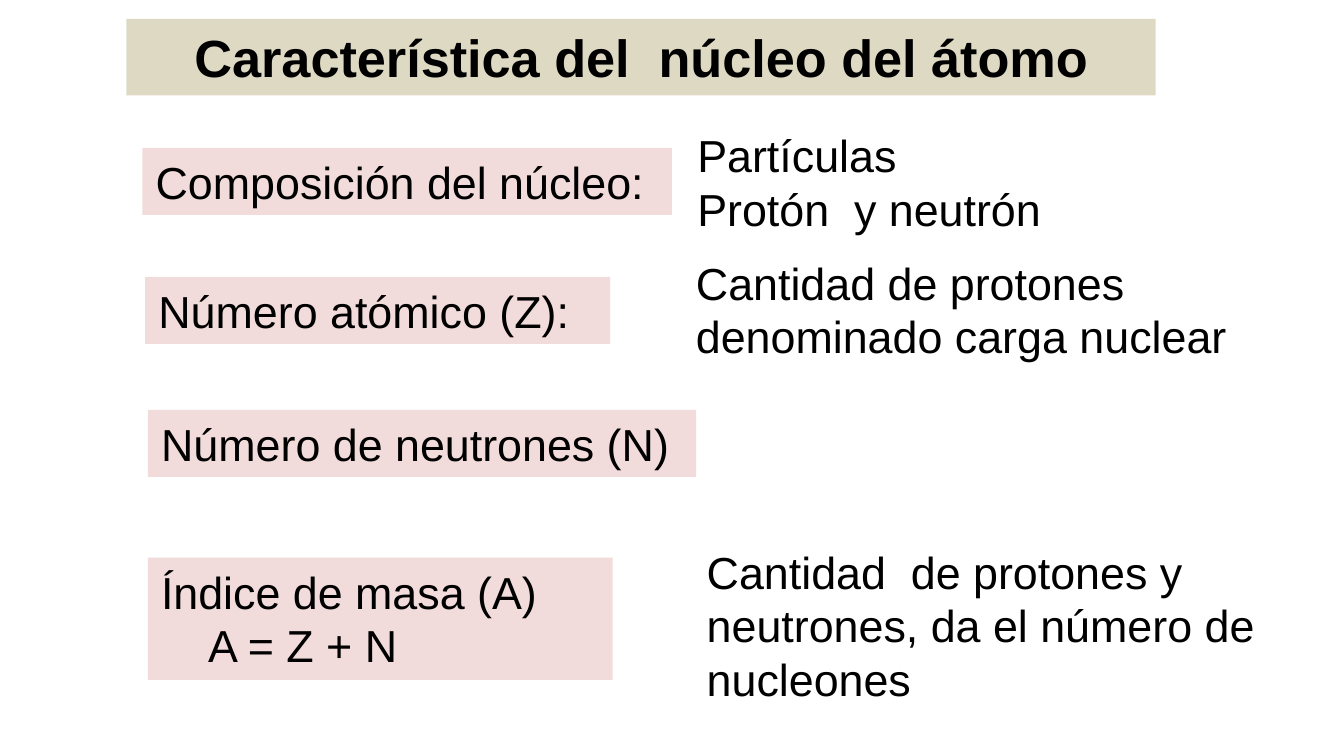
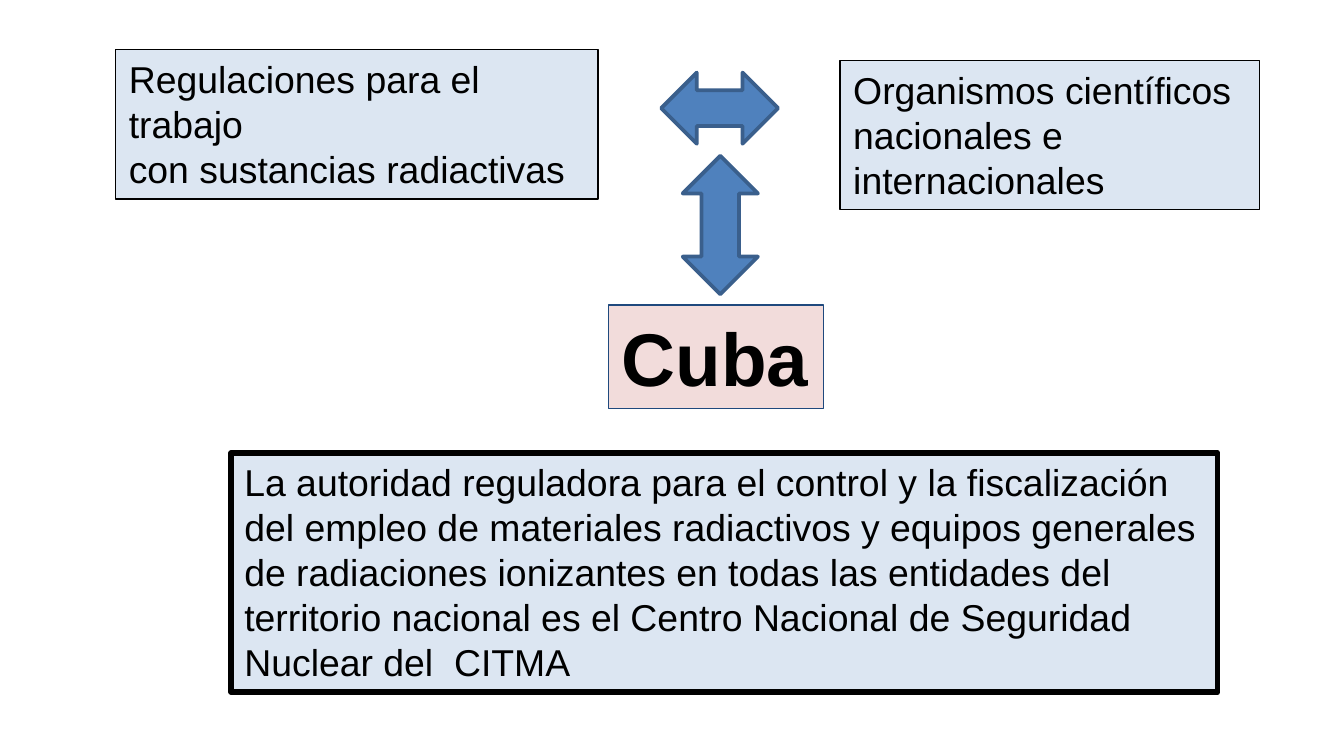
"""Builds two slides on the atomic nucleus and on the regulation of radioactive work."""
from pptx import Presentation
from pptx.dml.color import RGBColor
from pptx.enum.shapes import MSO_SHAPE
from pptx.enum.text import PP_ALIGN
from pptx.util import Inches, Pt

LEFT, CENTER = PP_ALIGN.LEFT, PP_ALIGN.CENTER
SIDEWAYS, UPRIGHT = MSO_SHAPE.LEFT_RIGHT_ARROW, MSO_SHAPE.UP_DOWN_ARROW
FONT = "Arial"
COLORS = {
    "text": "000000",
    "title": "DDD9C3",
    "term": "F2DCDB",
    "body": "DCE6F2",
    "arrow": "4F81BD",
    "arrow_edge": "3A5F8C",
    "country_edge": "1F497D",
}


def paint(shape, fill=None, edge=None, weight=0.75):
    if fill:
        shape.fill.solid()
        shape.fill.fore_color.rgb = RGBColor.from_string(COLORS[fill])
    if edge:
        shape.line.color.rgb = RGBColor.from_string(COLORS[edge])
        shape.line.width = Pt(weight)


def add_text(slide, text, at, size=24, bold=False, align=LEFT, wrap=True,
             last_indent=0, **look):
    box = slide.shapes.add_textbox(*map(Inches, at))
    paint(box, **look)
    frame = box.text_frame
    frame.word_wrap = wrap
    frame.text = text
    for paragraph in frame.paragraphs:
        paragraph.alignment = align
        for run in paragraph.runs:
            run.font.name = FONT
            run.font.size = Pt(size)
            run.font.bold = bold
            run.font.color.rgb = RGBColor.from_string(COLORS["text"])
    if last_indent:
        properties = frame.paragraphs[-1]._p.get_or_add_pPr()
        properties.set("marL", str(Inches(last_indent)))


prs = Presentation()
prs.slide_width = Inches(10)
prs.slide_height = prs.slide_width * 9 // 16
blank = prs.slide_layouts[6]

nucleus = prs.slides.add_slide(blank)
add_text(nucleus, "Característica del  núcleo del átomo", (0.94, 0.14, 7.66, 0.57),
         size=28, bold=True, align=CENTER, fill="title")

concepts = [
    ("Composición del núcleo:", (1.06, 1.1, 3.94, 0.5), 0,
     "Partículas\nProtón  y neutrón", (5.09, 0.9, 3.24, 0.91)),
    ("Número atómico (Z):", (1.08, 2.06, 3.46, 0.5), 0,
     "Cantidad de protones denominado carga nuclear", (5.08, 1.85, 4.17, 0.91)),
    ("Número de neutrones (N)", (1.1, 3.05, 4.08, 0.5), 0, None, None),
    ("Índice de masa (A)\nA = Z + N", (1.1, 4.15, 3.46, 0.91), 0.35,
     "Cantidad  de protones y neutrones, da el número de nucleones",
     (5.16, 4, 4.41, 1.31)),
]
for term, term_at, indent, meaning, meaning_at in concepts:
    add_text(nucleus, term, term_at, last_indent=indent, fill="term")
    if meaning:
        add_text(nucleus, meaning, meaning_at)

regulation = prs.slides.add_slide(blank)
statements = [
    ("Regulaciones para el trabajo\ncon sustancias radiactivas",
     (0.86, 0.37, 3.59, 1.11), 0.75),
    ("La autoridad reguladora para el control y la fiscalización del empleo de "
     "materiales radiactivos y equipos generales de radiaciones ionizantes en todas "
     "las entidades del territorio nacional es el Centro Nacional de Seguridad  "
     "Nuclear del  CITMA", (1.72, 3.37, 7.34, 1.78), 3),
    ("Organismos científicos nacionales e internacionales",
     (6.25, 0.45, 3.12, 1.11), 0.75),
]
for statement, at, weight in statements:
    add_text(regulation, statement, at, size=20, fill="body", edge="text", weight=weight)

for direction, at in [(SIDEWAYS, (4.92, 0.54, 0.87, 0.53)),
                      (UPRIGHT, (5.08, 1.16, 0.56, 1.03))]:
    arrow = regulation.shapes.add_shape(direction, *map(Inches, at))
    arrow.shadow.inherit = False
    paint(arrow, fill="arrow", edge="arrow_edge", weight=2)

add_text(regulation, "Cuba", (4.53, 2.27, 1.6, 0.77), size=40, bold=True, wrap=False,
         fill="term", edge="country_edge")

prs.save("out.pptx")
